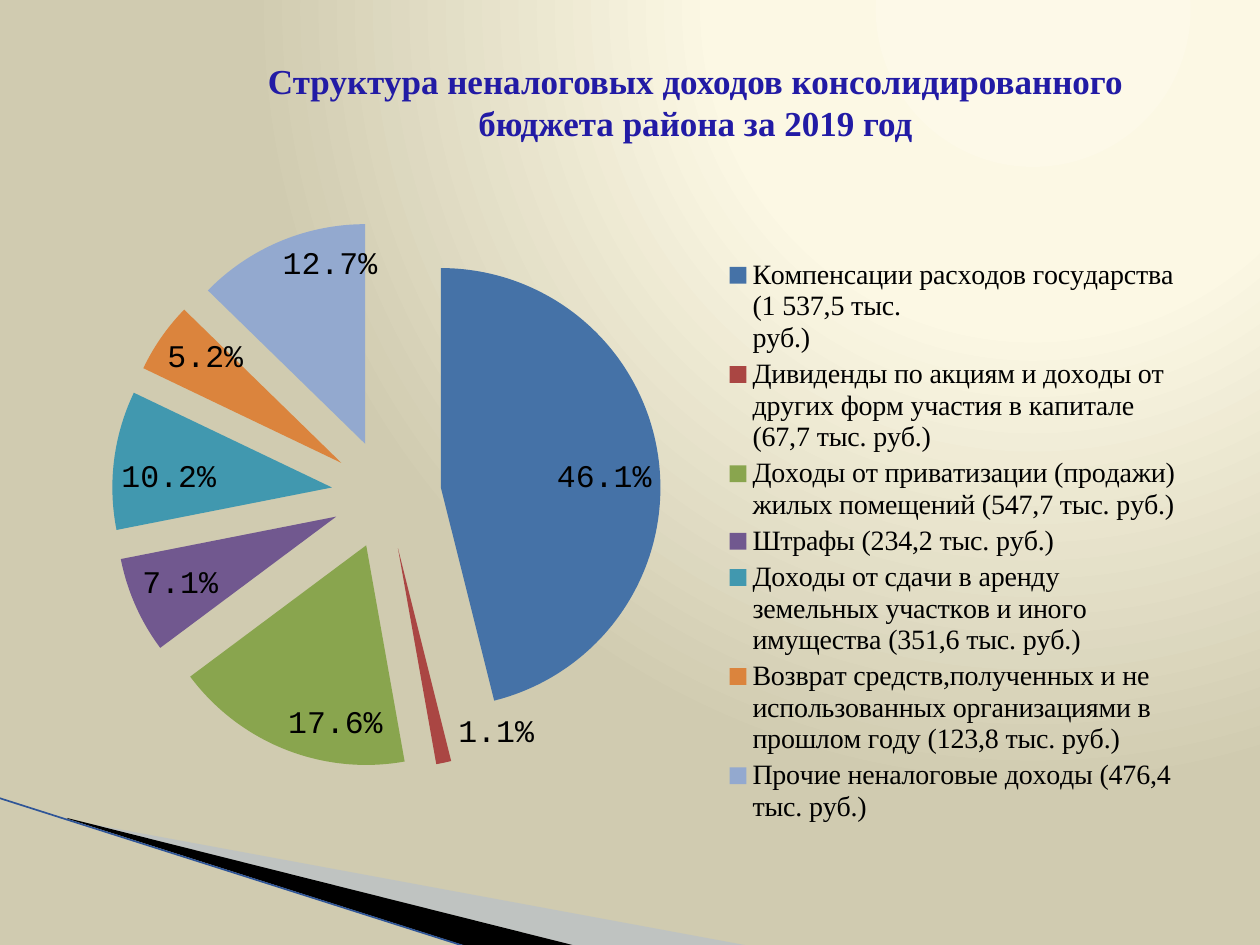
import pptx
import pptx.chart.data
import pptx.dml.color
import pptx.enum.chart
import pptx.enum.text
import pptx.oxml
import pptx.oxml.ns
import pptx.util

PX = 914400 / 126
CHART_W, CHART_H = 1134, 624
COLORS = {
    "centre": "FDF9E8", "glow": "FCF8E4", "edge": "D0CBB0",
    "title": "221BA5", "text": "000000",
    "wedge": "A7B9DB", "black": "000000", "line": "2F5597",
}
INCOME = [
    ("Компенсации расходов государства\n(1 537,5 тыс.\nруб.)", 0.461, "4572A7"),
    ("Дивиденды по акциям и доходы от других форм участия в капитале\n(67,7 тыс. руб.)", 0.011, "AA4643"),
    ("Доходы от приватизации (продажи) жилых помещений (547,7 тыс. руб.)", 0.176, "89A54E"),
    ("Штрафы (234,2 тыс. руб.)", 0.071, "71588F"),
    ("Доходы от сдачи в аренду земельных участков и иного имущества (351,6 тыс. руб.)", 0.102, "4198AF"),
    ("Возврат средств,полученных и не использованных организациями в прошлом году (123,8 тыс. руб.)", 0.052, "DB843D"),
    ("Прочие неналоговые доходы (476,4 тыс. руб.)", 0.127, "93A9CF"),
]
NS = pptx.oxml.ns.nsdecls("a", "c")
qn = pptx.oxml.ns.qn
rgb = pptx.dml.color.RGBColor.from_string


def px(*lengths):
    return [pptx.util.Emu(round(n * PX)) for n in lengths]


def manual_layout(x, y, w=None, h=None, inner=False):
    """Return a c:layout from px within the chart; without a size, x and y are offsets."""
    xml = '<c:layoutTarget val="inner"/>' if inner else ""
    if w:
        xml += '<c:xMode val="edge"/><c:yMode val="edge"/>'
    for tag, value, full in zip("xywh", (x, y, w, h), (CHART_W, CHART_H) * 2):
        if value is not None:
            xml += f'<c:{tag} val="{value / full:.4f}"/>'
    return pptx.oxml.parse_xml(f"<c:layout {NS}><c:manualLayout>{xml}</c:manualLayout></c:layout>")


prs = pptx.Presentation()
prs.slide_width, prs.slide_height = px(1260, 945)
s = prs.slides.add_slide(prs.slide_layouts[6])

# Background glow
s.background.fill.gradient()
grad = s.element.find(".//" + qn("a:gradFill"))
stops = "".join(
    f'<a:gs pos="{pos * 1000}"><a:srgbClr val="{COLORS[name]}"/></a:gs>'
    for pos, name in ((0, "centre"), (40, "glow"), (100, "edge"))
)
grad.getparent().replace(grad, pptx.oxml.parse_xml(
    f'<a:gradFill {NS} rotWithShape="1"><a:gsLst>{stops}</a:gsLst>'
    '<a:path path="circle"><a:fillToRect l="65000" t="0" r="0" b="98000"/></a:path></a:gradFill>'))

# Corner wedges
for color, alpha, points in (
    ("wedge", 40, [(69, 820), (750, 946), (575, 946), (69, 819)]),
    ("black", 100, [(67, 818), (576, 946), (469, 947), (68, 819)]),
):
    builder = s.shapes.build_freeform(*points[0], scale=PX)
    builder.add_line_segments(points[1:], close=True)
    sp = builder.convert_to_shape()
    sp.shadow.inherit = False
    sp.fill.solid()
    sp.fill.fore_color.rgb = rgb(COLORS[color])
    sp.line.fill.background()
    if alpha < 100:
        clr = sp._element.spPr.find(".//" + qn("a:srgbClr"))
        clr.append(pptx.oxml.parse_xml(f'<a:alpha {NS} val="{alpha * 1000}"/>'))

line = s.shapes.add_connector(1, *px(-1, 798, 467, 947))
line.line.color.rgb = rgb(COLORS["line"])
line.line.width = pptx.util.Pt(0.95)
line._element.spPr.append(pptx.oxml.parse_xml(f"<a:effectLst {NS}/>"))

# Pie chart
data = pptx.chart.data.CategoryChartData(number_format="0.0%")
data.categories = [name for name, share, color in INCOME]
data.add_series("Series 1", [share for name, share, color in INCOME])
chart = s.shapes.add_chart(
    pptx.enum.chart.XL_CHART_TYPE.PIE, *px(63, 204, CHART_W, CHART_H), data).chart
chart.has_title = False
chart.font.size = pptx.util.Pt(18)
chart.font.name = "Courier New"
chart.font.color.rgb = rgb(COLORS["text"])
plot = chart.plots[0]
plot.vary_by_categories = True
plot_area = chart._chartSpace.find(".//" + qn("c:plotArea"))
for old in plot_area.findall(qn("c:layout")):
    plot_area.remove(old)
plot_area.insert(0, manual_layout(49, 16, 549, 549, inner=True))

series = plot.series[0]
for i, (name, share, color) in enumerate(INCOME):
    fill = series.points[i].format.fill
    fill.solid()
    fill.fore_color.rgb = rgb(color)
first_point = series._element.find(qn("c:dPt"))
first_point.addprevious(pptx.oxml.parse_xml(f'<c:explosion {NS} val="25"/>'))

labels = series.data_labels
labels.show_value = True
labels.show_percentage = False
labels.number_format = "0.0%"
labels.number_format_is_linked = False
labels.position = pptx.enum.chart.XL_LABEL_POSITION.INSIDE_END
labels.font.size = pptx.util.Pt(18)
labels.font.name = "Courier New"
for old in labels._element.findall(qn("c:showLeaderLines")):
    labels._element.remove(old)
labels._element.append(pptx.oxml.parse_xml(f'<c:showLeaderLines {NS} val="0"/>'))

# The thinnest slice carries its label outside
thin = series.points[1].data_label
thin.font.size = pptx.util.Pt(18)
thin.font.name = "Courier New"
thin.position = pptx.enum.chart.XL_LABEL_POSITION.OUTSIDE_END
idx = series._element.find(".//" + qn("c:dLbl")).find(qn("c:idx"))
idx.addnext(pptx.oxml.parse_xml(f'<c:numFmt {NS} formatCode="0.0%" sourceLinked="0"/>'))
idx.addnext(manual_layout(13, -54))

chart.has_legend = True
legend = chart.legend
legend.position = pptx.enum.chart.XL_LEGEND_POSITION.RIGHT
legend.include_in_layout = False
legend.font.size = pptx.util.Pt(16)
legend.font.name = "Times New Roman"
legend.font.color.rgb = rgb(COLORS["text"])
legend_pos = legend._element.find(qn("c:legendPos"))
for old in legend._element.findall(qn("c:layout")):
    legend._element.remove(old)
legend_pos.addnext(manual_layout(662, 51, 455, 573))

# Title
tf = s.shapes.add_textbox(*px(194, 38, 1003, 127)).text_frame
tf.word_wrap = True
tf.vertical_anchor = pptx.enum.text.MSO_ANCHOR.MIDDLE
p = tf.paragraphs[0]
p.alignment = pptx.enum.text.PP_ALIGN.CENTER
r = p.add_run()
r.text = "Структура неналоговых доходов консолидированного бюджета района за 2019 год"
r.font.size = pptx.util.Pt(20)
r.font.name = "Times New Roman"
r.font.bold = True
r.font.color.rgb = rgb(COLORS["title"])

prs.save("out.pptx")
